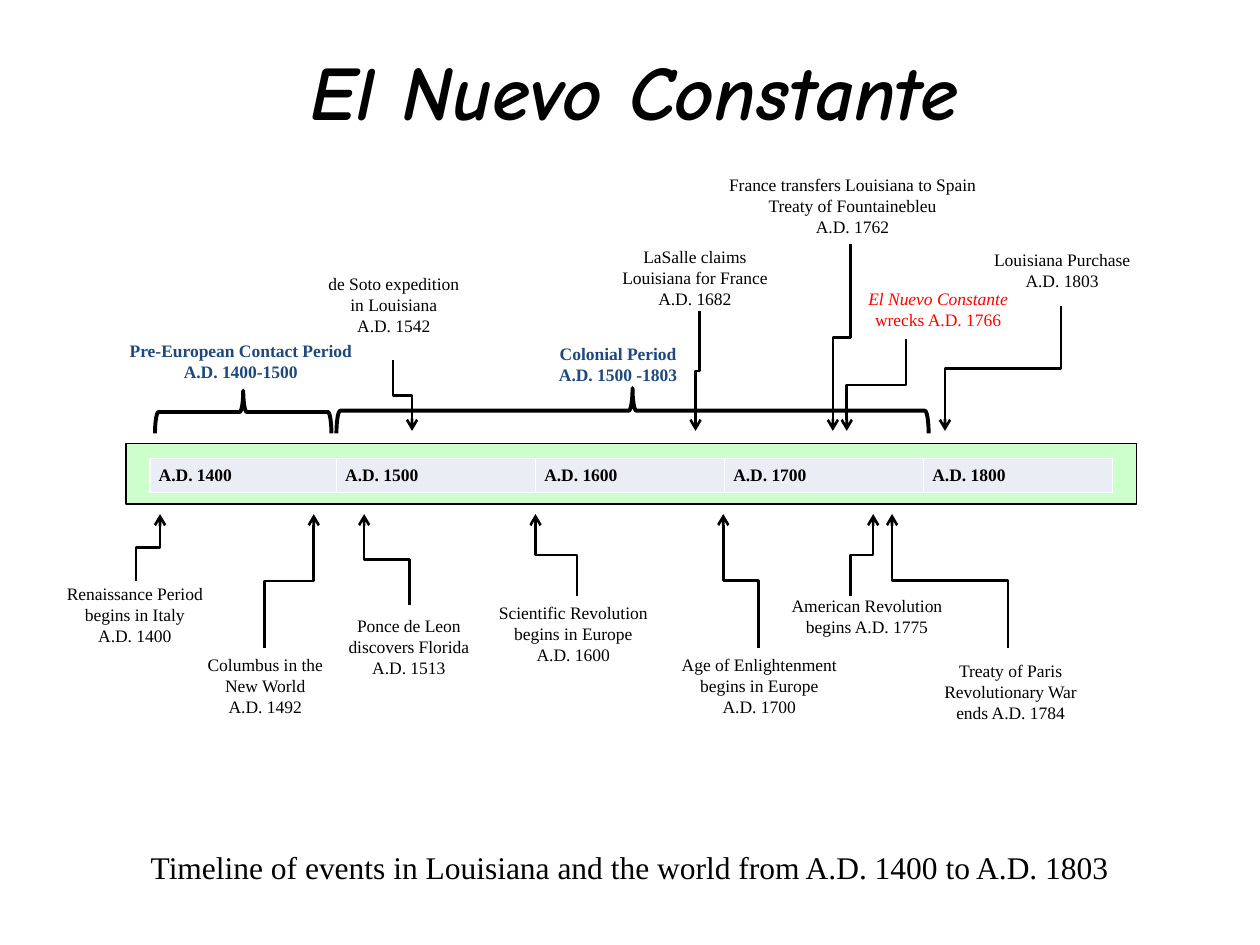
from lxml import etree
from pptx import Presentation
from pptx.dml.color import RGBColor
from pptx.enum.shapes import MSO_CONNECTOR, MSO_SHAPE
from pptx.enum.text import MSO_ANCHOR, MSO_AUTO_SIZE, PP_ALIGN
from pptx.oxml.ns import qn
from pptx.util import Inches, Pt

ELBOW = MSO_CONNECTOR.ELBOW
CENTER = PP_ALIGN.CENTER
MIDDLE = MSO_ANCHOR.MIDDLE
SERIF = "Times New Roman"
COLORS = {name: RGBColor.from_string(value) for name, value in {
    "black": "000000", "red": "FF0000", "navy": "1F497D",
    "bar": "CCFFCC", "cell": "E9EDF4"}.items()}
ARROW_ABOVE, ARROW_BELOW = 3.42, 4.08  # where arrows stop near the bar


def add_label(left, top, width, lines, color="black", size=10, bold=False):
    height = 0.1 + 0.017 * size * len(lines)
    box = page.shapes.add_textbox(Inches(left), Inches(top), Inches(width), Inches(height))
    frame = box.text_frame
    frame.word_wrap = False
    frame.auto_size = MSO_AUTO_SIZE.SHAPE_TO_FIT_TEXT
    frame.text = "\n".join(lines)
    for para in frame.paragraphs:
        para.alignment = CENTER
        para.font.name, para.font.size = SERIF, Pt(size)
        para.font.bold = bold
        para.font.color.rgb = COLORS[color]
    return frame


def add_elbow_arrow(x1, y1, x2, y2):
    """Draw a vertical-horizontal-vertical arrow as a rotated elbow connector."""
    mid_x, mid_y = (x1 + x2) / 2, (y1 + y2) / 2
    down = y2 > y1
    half_run = abs(y2 - y1) / 2
    half_rise = (x1 - x2) / 2 if down else (x2 - x1) / 2
    arrow = page.shapes.add_connector(
        ELBOW, Inches(mid_x - half_run), Inches(mid_y - half_rise),
        Inches(mid_x + half_run), Inches(mid_y + half_rise))
    arrow.line.color.rgb = COLORS["black"]
    arrow.line.width = Pt(1.5)
    properties = arrow._element.spPr
    properties.find(qn("a:xfrm")).set("rot", str((90 if down else 270) * 60000))
    etree.SubElement(properties.find(qn("a:ln")), qn("a:tailEnd"), type="arrow")
    etree.SubElement(properties, qn("a:effectLst"))


deck = Presentation()
deck.slide_width, deck.slide_height = Inches(10), Inches(7.5)
page = deck.slides.add_slide(deck.slide_layouts[5])

title = page.shapes.title
title.left, title.top = Inches(0.33), Inches(0.17)
title.width, title.height = Inches(9.42), Inches(1.08)
title.text_frame.text = "El Nuevo Constante"
title.text_frame.vertical_anchor = MIDDLE
heading = title.text_frame.paragraphs[0]
heading.alignment = CENTER
heading.font.name, heading.font.size = "Comic Neue", Pt(44)
heading.font.bold = heading.font.italic = True
heading.font.color.rgb = COLORS["black"]

caption = add_label(0.5, 6.68, 9, [
    "Timeline of events in Louisiana and the world from A.D. 1400 to A.D. 1803"], size=18)
caption.word_wrap = True

# Timeline bar with one table cell per century
bar = page.shapes.add_shape(
    MSO_SHAPE.RECTANGLE, Inches(1), Inches(3.52), Inches(8.02), Inches(0.48))
bar.shadow.inherit = False
bar.fill.solid()
bar.fill.fore_color.rgb = COLORS["bar"]
bar.line.color.rgb = COLORS["black"]
bar.line.width = Pt(0.75)

column_widths = [1.48, 1.58, 1.5, 1.58, 1.5]
table = page.shapes.add_table(
    1, len(column_widths), Inches(1.19), Inches(3.64),
    Inches(sum(column_widths)), Inches(0.27)).table
table.first_row = table.horz_banding = False
for index, width in enumerate(column_widths):
    table.columns[index].width = Inches(width)
    cell = table.cell(0, index)
    cell.text = f"A.D. {1400 + 100 * index}"
    cell.vertical_anchor = MIDDLE
    cell.margin_left = cell.margin_right = Inches(0.07)
    cell.margin_top = cell.margin_bottom = 0
    para = cell.text_frame.paragraphs[0]
    para.font.name, para.font.size, para.font.bold = SERIF, Pt(10), True
    para.font.color.rgb = COLORS["black"]
    cell_properties = cell._tc.get_or_add_tcPr()
    for side in ("lnL", "lnR", "lnT", "lnB"):
        border = etree.SubElement(cell_properties, qn(f"a:{side}"), w=str(Pt(1)))
        border_fill = etree.SubElement(border, qn("a:solidFill"))
        etree.SubElement(border_fill, qn("a:srgbClr"), val="FFFFFF")
    cell.fill.solid()
    cell.fill.fore_color.rgb = COLORS["cell"]

# Periods: brace frame before its quarter turn, then the label
periods = [
    ((1.76, 2.57, 0.34, 1.4), (0.9, 2.65, 2.02),
     ["Pre-European Contact Period", "A.D. 1400-1500"]),
    ((4.84, 0.91, 0.36, 4.7), (4.33, 2.67, 1.15),
     ["Colonial Period", "A.D. 1500 -1803"]),
]
for brace_frame, label_place, lines in periods:
    brace = page.shapes.add_shape(MSO_SHAPE.LEFT_BRACE, *map(Inches, brace_frame))
    brace.rotation = 90
    brace.shadow.inherit = False
    brace.fill.background()
    brace.line.color.rgb = COLORS["black"]
    brace.line.width = Pt(2.25)
    add_label(*label_place, lines, "navy", bold=True)

# Events: label left, top, width; arrow start x, y and end x; lines
events_above = [
    (2.5, 2.12, 1.25, 3.12, 2.86, 3.27, ["de Soto expedition", "in Louisiana", "A.D. 1542"]),
    (4.83, 1.9, 1.37, 5.55, 2.47, 5.52, ["LaSalle claims", "Louisiana for France", "A.D. 1682"]),
    (5.67, 1.33, 2.19, 6.75, 1.94, 6.61,
     ["France transfers Louisiana to Spain", "Treaty of Fountainebleu", "A.D. 1762"]),
    (7.78, 1.93, 1.3, 8.42, 2.43, 7.5, ["Louisiana Purchase", "A.D. 1803"]),
]
events_below = [
    (0.42, 4.58, 1.3, 1.08, 4.61, 1.27, ["Renaissance Period", "begins in Italy", "A.D. 1400"]),
    (1.54, 5.14, 1.13, 2.1, 5.14, 2.49, ["Columbus in the", "New World", "A.D. 1492"]),
    (2.66, 4.83, 1.17, 3.25, 4.8, 2.89, ["Ponce de Leon", "discovers Florida", "A.D. 1513"]),
    (3.85, 4.73, 1.4, 4.58, 4.73, 4.25,
     ["Scientific Revolution", "begins in Europe", "A.D. 1600"]),
    (5.3, 5.14, 1.45, 6.02, 5.14, 5.74,
     ["Age of Enlightenment", "begins in Europe", "A.D. 1700"]),
    (6.17, 4.67, 1.42, 6.75, 4.73, 6.93, ["American Revolution", "begins A.D. 1775"]),
    (7.38, 5.19, 1.28, 8, 5.14, 7.08, ["Treaty of Paris", "Revolutionary War", "ends A.D. 1784"]),
]
for events, arrow_end in ((events_above, ARROW_ABOVE), (events_below, ARROW_BELOW)):
    for left, top, width, start_x, start_y, end_x, lines in events:
        add_elbow_arrow(start_x, start_y, end_x, arrow_end)
        add_label(left, top, width, lines)

add_elbow_arrow(7.19, 2.69, 6.72, ARROW_ABOVE)
wreck = add_label(6.78, 2.24, 1.33, ["El Nuevo Constante", "wrecks A.D. 1766"], "red")
wreck.paragraphs[0].font.italic = True

deck.save("out.pptx")
